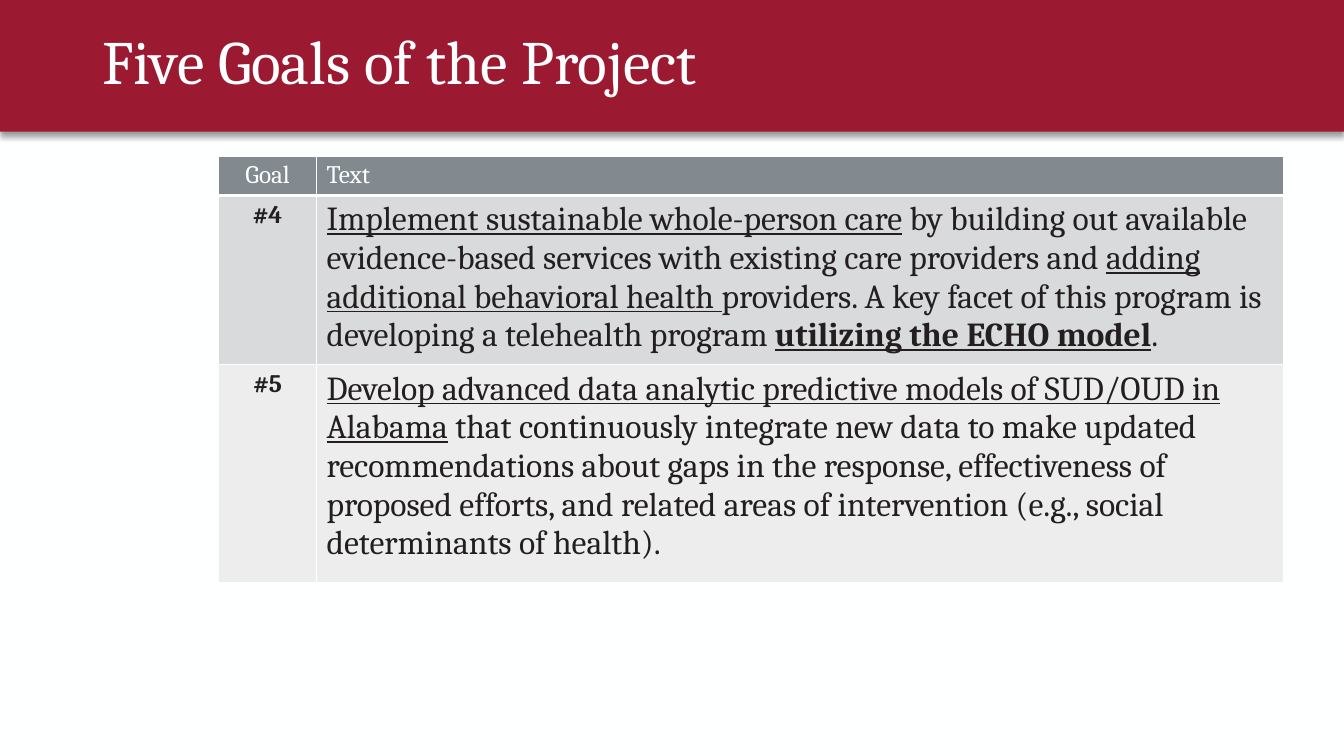
import pptx
import pptx.dml.color
import pptx.enum.shapes
import pptx.enum.text
import pptx.oxml
import pptx.oxml.ns
import pptx.util
from lxml import etree

Pt = pptx.util.Pt
ALIGN = pptx.enum.text.PP_ALIGN
ANCHOR = pptx.enum.text.MSO_ANCHOR
FONT = "Cambria"
WHITE, CRIMSON, INK = "FEFFFF", "9C1932", "231F20"
HEADER_FILL = "828A8F"
ROW_FILLS = ["D8DADB", "EDEDEE"]
COLUMN_WIDTHS = [69.84, 690.48]
ROW_HEIGHTS = [23, 121, 155.5]

# Each goal: label, then its text as (words, format) spans
GOALS = [
    ("#4", [
        ("Implement sustainable whole-person care", {"underline": True}),
        (" by building out available evidence-based services with existing care providers and ", {}),
        ("adding additional behavioral health ", {"underline": True}),
        ("providers. A key facet of this program is developing a telehealth program ", {}),
        ("utilizing the ECHO model", {"bold": True, "underline": True}),
        (".", {}),
    ]),
    ("#5", [
        ("Develop advanced data analytic predictive models of SUD/OUD in Alabama", {"underline": True}),
        (" that continuously integrate new data to make updated recommendations about gaps"
         " in the response, effectiveness of proposed efforts, and related areas of"
         " intervention (e.g., social determinants of health).", {}),
    ]),
]


def rgb(value):
    return pptx.dml.color.RGBColor.from_string(value)


def paint(fill, color):
    fill.solid()
    fill.fore_color.rgb = rgb(color)


def add_span(para, text, size=18, color=INK, bold=False, underline=False):
    span = para.add_run()
    span.text = text
    font = span.font
    font.name, font.size, font.bold, font.underline = FONT, Pt(size), bold, underline
    font.color.rgb = rgb(color)


def add_band(page, title, width, height):
    """Add the coloured header band with its shadow, behind the title."""
    band = page.shapes.add_shape(
        pptx.enum.shapes.MSO_SHAPE.RECTANGLE, 0, 0, Pt(width), Pt(height))
    paint(band.fill, CRIMSON)
    band.line.fill.background()
    band.shadow.inherit = False
    effects = band.element.spPr.find(pptx.oxml.ns.qn("a:effectLst"))
    effects.append(pptx.oxml.parse_xml(
        f'<a:outerShdw {pptx.oxml.ns.nsdecls("a")} blurRad="{Pt(4)}" dist="{Pt(3)}"'
        ' dir="5400000" algn="t" rotWithShape="0">'
        '<a:srgbClr val="000000"><a:alpha val="40000"/></a:srgbClr></a:outerShdw>'))
    title.element.addprevious(band.element)


def set_title(title, text):
    title.left, title.top, title.width, title.height = Pt(66), Pt(12.5), Pt(828), Pt(67.5)
    title.text_frame.vertical_anchor = ANCHOR.MIDDLE
    para = title.text_frame.paragraphs[0]
    para.alignment = ALIGN.LEFT
    para.line_spacing = 0.9
    add_span(para, text, size=44, color=WHITE)


def set_borders(cell, bottom=1):
    properties = cell._tc.get_or_add_tcPr()
    for side, width in (("L", 1), ("R", 1), ("T", 1), ("B", bottom)):
        line = etree.SubElement(properties, pptx.oxml.ns.qn(f"a:ln{side}"), w=str(Pt(width)))
        fill = etree.SubElement(line, pptx.oxml.ns.qn("a:solidFill"))
        etree.SubElement(fill, pptx.oxml.ns.qn("a:srgbClr"), val=WHITE)


def fill_cell(cell, spans, fill, align=ALIGN.LEFT, bottom=1, **text_format):
    set_borders(cell, bottom)
    paint(cell.fill, fill)
    para = cell.text_frame.paragraphs[0]
    para.alignment = align
    for text, span_format in spans:
        add_span(para, text, **{**text_format, **span_format})


def add_goal_table(page, left, top):
    table = page.shapes.add_table(
        len(ROW_HEIGHTS), len(COLUMN_WIDTHS), Pt(left), Pt(top),
        Pt(sum(COLUMN_WIDTHS)), Pt(sum(ROW_HEIGHTS))).table
    for column, width in zip(table.columns, COLUMN_WIDTHS):
        column.width = Pt(width)
    for row, height in zip(table.rows, ROW_HEIGHTS):
        row.height = Pt(height)
    for index, (heading, align) in enumerate([("Goal", ALIGN.CENTER), ("Text", ALIGN.LEFT)]):
        fill_cell(table.cell(0, index), [(heading, {})], HEADER_FILL, align,
                  bottom=3, color=WHITE)
    for index, ((label, spans), fill) in enumerate(zip(GOALS, ROW_FILLS), start=1):
        fill_cell(table.cell(index, 0), [(label, {})], fill, ALIGN.CENTER, bold=True)
        fill_cell(table.cell(index, 1), spans, fill, size=24)


def main():
    deck = pptx.Presentation()
    deck.slide_width, deck.slide_height = Pt(960), Pt(540)
    page = deck.slides.add_slide(deck.slide_layouts.get_by_name("Title Only"))
    paint(page.background.fill, WHITE)
    title = page.shapes.title
    set_title(title, "Five Goals of the Project")
    add_band(page, title, 960, 94)
    add_goal_table(page, 156.24, 111.6)
    deck.save("out.pptx")


if __name__ == "__main__":
    main()
